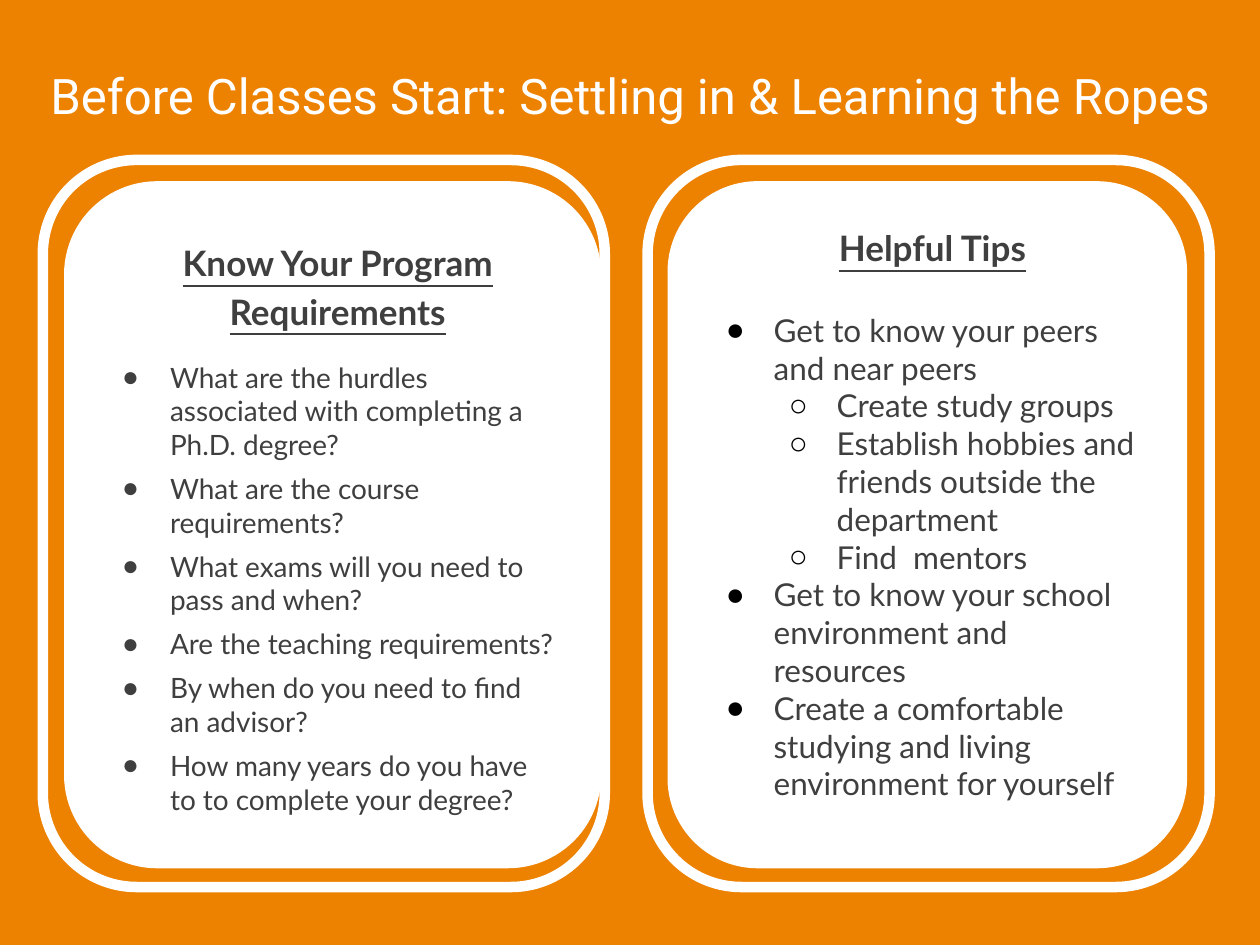
"""Build the slide on settling in before classes start."""
from lxml.etree import SubElement
from pptx import Presentation
from pptx.dml.color import RGBColor
from pptx.enum.shapes import MSO_SHAPE
from pptx.enum.text import MSO_ANCHOR, MSO_AUTO_SIZE, PP_ALIGN
from pptx.oxml.ns import qn
from pptx.util import Inches, Pt


def paint(color, code):
    color.rgb = RGBColor.from_string(code)


def place(frame, box, sides, top, anchor):
    frame.left, frame.top, frame.width, frame.height = map(Inches, box)
    text = frame.text_frame
    text.word_wrap = True
    text.auto_size = MSO_AUTO_SIZE.NONE
    text.vertical_anchor = anchor
    text.margin_left = text.margin_right = Inches(sides)
    text.margin_top = text.margin_bottom = Inches(top)
    return text


WHITE, GREY, BLACK, ORANGE = "FFFFFF", "3F3F3F", "000000", "ED8100"
TOP, PITCH = 1.27, 4.8
CARDS = [
    dict(left=0.55, width=4.18, top=0.39, gap=16, size=16, space=6, dot=GREY,
         head="Know Your Program Requirements",
         items=[(0, "What are the hurdles associated with completing a Ph.D. degree?"),
                (0, "What are the course requirements?"),
                (0, "What exams will you need to pass and when?"),
                (0, "Are the teaching requirements?"),
                (0, "By when do you need to find an advisor?"),
                (0, "How many years do you have to to complete your degree?")]),
    dict(left=5.34, width=4.04, top=0.27, gap=24, size=18, space=0, dot=BLACK,
         head="Helpful Tips",
         items=[(0, "Get to know your peers and near peers"),
                (1, "Create study groups"),
                (1, "Establish hobbies and friends outside the department"),
                (1, "Find  mentors"),
                (0, "Get to know your school environment and resources"),
                (0, "Create a comfortable studying and living environment for yourself")]),
]

deck = Presentation()
deck.slide_width, deck.slide_height = Inches(10), Inches(7.5)
slide = deck.slides.add_slide(deck.slide_layouts[3])
slide.background.fill.solid()
paint(slide.background.fill.fore_color, ORANGE)
title, *bodies = slide.placeholders

text = place(title, (0, 0.24, 10, 1.03), 0.1, 0.1, MSO_ANCHOR.MIDDLE)
text.text = "Before Classes Start: Settling in & Learning the Ropes"
line = text.paragraphs[0]
line.alignment = PP_ALIGN.CENTER
line.font.name, line.font.size = "Roboto", Pt(28)
paint(line.font.color, WHITE)

for col, (card, body) in enumerate(zip(CARDS, bodies)):
    ring = (0.34 + col * PITCH, TOP, 4.46, 5.77)
    box = (card["left"], TOP + 0.21, card["width"], 5.37)
    for area, full in ((ring, False), (box, True)):
        shape = slide.shapes.add_shape(MSO_SHAPE.ROUNDED_RECTANGLE, *map(Inches, area))
        shape.adjustments[0] = 0.167
        shape.shadow.inherit = False
        shape.line.width = Pt(6)
        paint(shape.line.color, WHITE)
        if full:
            shape.fill.solid()
            paint(shape.fill.fore_color, WHITE)
        else:
            shape.fill.background()

    slide.shapes._spTree.append(body._element)
    text = place(body, box, 0.3, card["top"], MSO_ANCHOR.TOP)
    for row, (level, words) in enumerate([(0, card["head"]), *card["items"]]):
        line = text.add_paragraph() if row else text.paragraphs[0]
        line.text, line.level = words, level
        props = line._p.get_or_add_pPr()
        indent = 0.5 + level / 2 if row else 0.08
        props.set("marL", str(Inches(indent)))
        props.set("indent", str(Inches(-0.38 if row else 0)))
        if row:
            hue = SubElement(props, qn("a:buClr"))
            SubElement(hue, qn("a:srgbClr"), val=card["dot"])
            SubElement(props, qn("a:buChar"), char="●○"[level])
        else:
            SubElement(props, qn("a:buNone"))
        line.alignment = PP_ALIGN.LEFT if row else PP_ALIGN.CENTER
        line.line_spacing = 1.0 if row else 1.15
        line.space_before = Pt((0, card["gap"])[row] if row < 2 else card["space"])
        line.space_after = Pt(0)
        line.font.name = "Lato"
        line.font.size = Pt(card["size"] if row else 20)
        line.font.bold = line.font.underline = not row
        paint(line.font.color, GREY)

deck.save("out.pptx")
